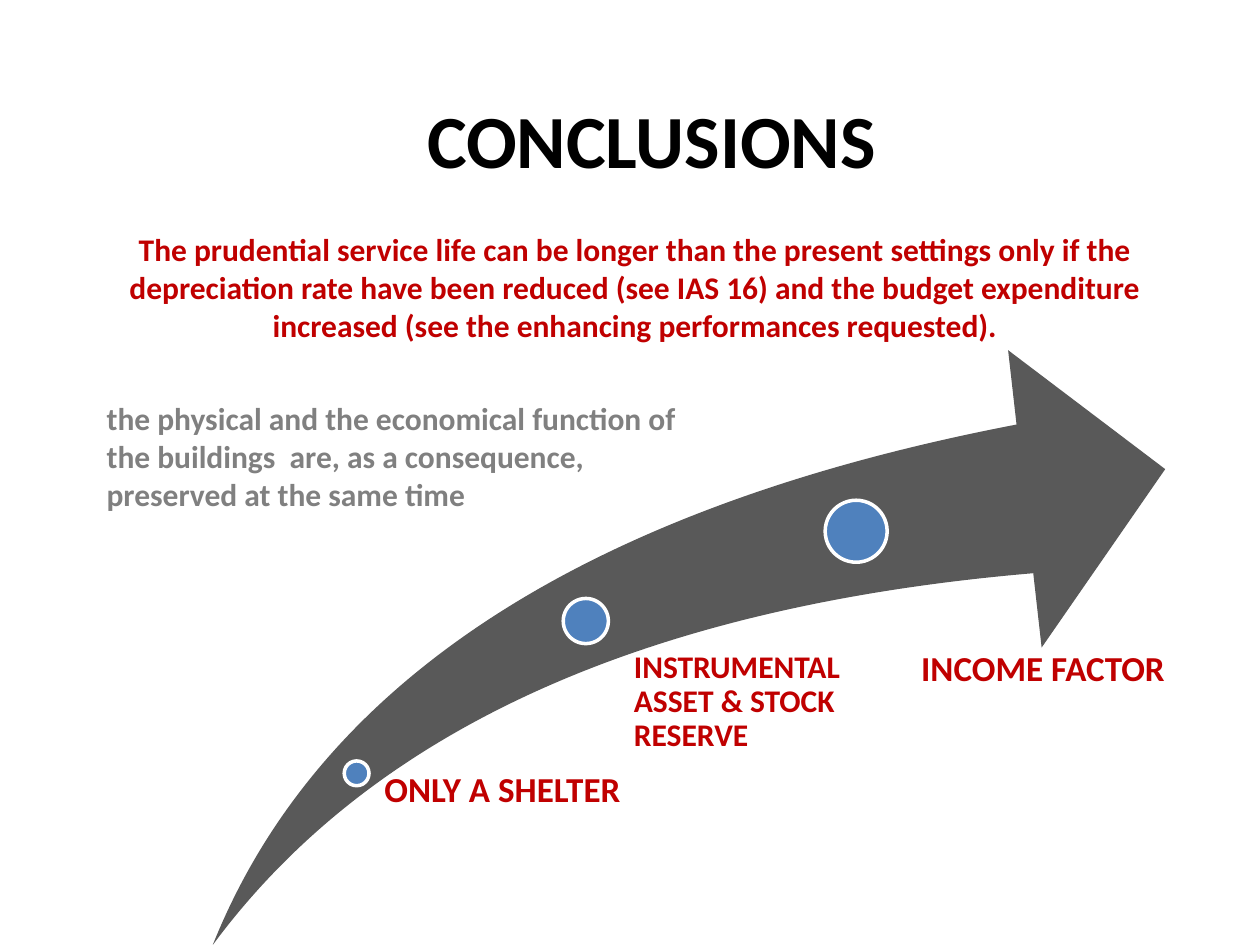
from pptx import Presentation
from pptx.dml.color import RGBColor as Rgb
from pptx.enum.shapes import MSO_SHAPE as Shape
from pptx.enum.text import MSO_ANCHOR as Anchor, MSO_AUTO_SIZE as Fit, PP_ALIGN as Align
from pptx.util import Cm, Pt

# Content: wording, places in cm (left, top, width, height)
TITLE = "CONCLUSIONS"
NOTES = [
    ("The prudential service life can be longer than the present settings only if "
     "the depreciation rate have been reduced (see IAS 16) and the budget expenditure "
     "increased (see the enhancing performances requested).",
     (1.3, 4.52, 23.01, 2.57), "red", Align.CENTER),
    ("the physical and the economical function of the buildings  are, as a "
     "consequence, preserved at the same time",
     (1.9, 7.92, 12.7, 2.57), "gray", Align.LEFT),
]
ARROW = (4.29, 7.06, 19.2, 11.99)
# Each step: dot centre x, y and size; label, box, left inset, text size
STEPS = [
    ((7.19, 15.59, 0.5), "ONLY A SHELTER", (7.49, 15.57, 5.54, 3.48), 0.26, 20),
    ((11.81, 12.52, 0.91), "INSTRUMENTAL ASSET & STOCK RESERVE",
     (12.29, 13.13, 6.15, 3.07), 0.49, 18),
    ((17.26, 10.71, 1.25), "INCOME FACTOR", (17.91, 13.13, 5.79, 5.92), 0.66, 20),
]
COLORS = {"black": "000000", "red": "C00000", "gray": "808080",
          "dark": "595959", "blue": "4F81BD", "white": "FFFFFF"}


def tint(name):
    return Rgb.from_string(COLORS[name])


def apply(obj, style):
    for key, val in style.items():
        setattr(obj, key, val)


def write(box, text, size, color, frame, para):
    """Fill a text shape with one bold paragraph."""
    body = box.text_frame
    apply(body, {"word_wrap": True, "auto_size": Fit.NONE, **frame})
    line = body.paragraphs[0]
    apply(line, para)
    run = line.add_run()
    run.text = text
    apply(run.font, {"name": "Calibri", "size": Pt(size), "bold": True})
    run.font.color.rgb = tint(color)


def draw(shapes, kind, place, color):
    """Add a plain filled shape without outline."""
    part = shapes.add_shape(kind, *map(Cm, place))
    part.shadow.inherit = False
    part.fill.solid()
    part.fill.fore_color.rgb = tint(color)
    part.line.fill.background()
    return part


deck = Presentation()
apply(deck, {"slide_width": Cm(25.4), "slide_height": Cm(19.05)})
slide = deck.slides.add_slide(deck.slide_layouts[5])

# Title
title = slide.shapes.title
apply(title, {"left": Cm(1.7), "top": Cm(1.2), "width": Cm(22.86), "height": Cm(3.18)})
write(title, TITLE, 42.9, "black", {"vertical_anchor": Anchor.MIDDLE},
      {"alignment": Align.CENTER})

# Rising arrow with its steps
group = slide.shapes.add_group_shape().shapes
arrow = draw(group, Shape.SWOOSH_ARROW, ARROW, "dark")
for i in range(2):
    arrow.adjustments[i] = 0.25
for (x, y, size), text, place, inset, font in STEPS:
    dot = draw(group, Shape.OVAL, (x - size / 2, y - size / 2, size, size), "blue")
    dot.line.color.rgb = tint("white")
    dot.line.width = Pt(2)
    frame = {"margin_left": Cm(inset), "margin_top": 0,
             "margin_right": 0, "margin_bottom": 0}
    write(group.add_textbox(*map(Cm, place)), text, font, "red", frame,
          {"line_spacing": 0.9})

# Statements
for text, place, color, align in NOTES:
    write(slide.shapes.add_textbox(*map(Cm, place)), text, 18, color,
          {"auto_size": Fit.SHAPE_TO_FIT_TEXT}, {"alignment": align})

deck.save("out.pptx")
